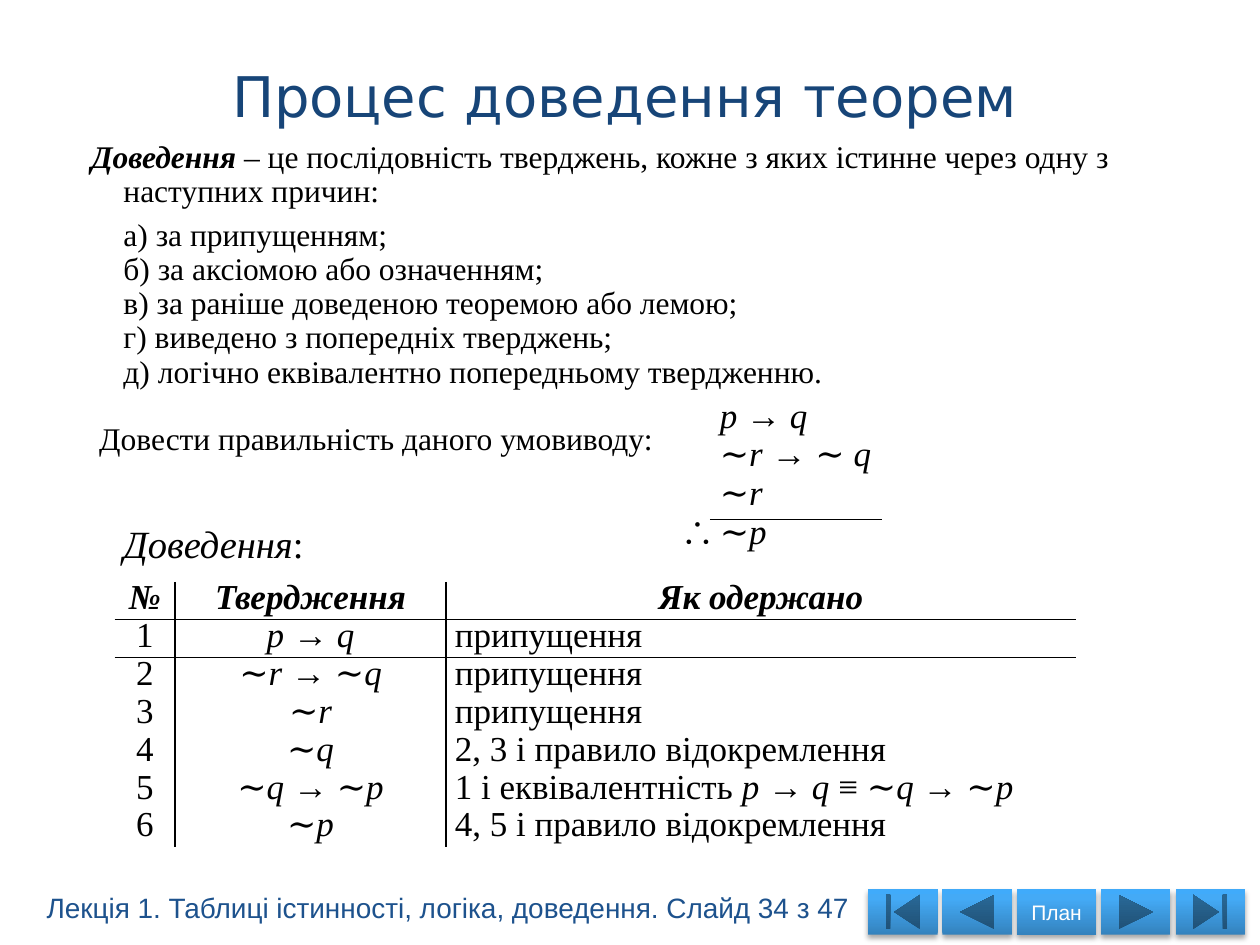
from pptx import Presentation
from pptx import util as u
from pptx.dml.color import RGBColor
from pptx.enum import shapes, text
from pptx.oxml import ns, parse_xml

BLACK = RGBColor(0x00, 0x00, 0x00)
WHITE = RGBColor(0xFF, 0xFF, 0xFF)
TITLE_BLUE = RGBColor(0x17, 0x45, 0x78)
FOOTER_BLUE = RGBColor(0x1D, 0x52, 0x8D)
BUTTON_STOPS = [
    (0, RGBColor(0x34, 0x83, 0xBE)),
    (80, RGBColor(0x44, 0xAA, 0xF6)),
    (100, RGBColor(0x40, 0xAB, 0xFB)),
]
SERIF = "Times New Roman"
NO_TABLE_STYLE = "{2D5ABB26-0587-4C30-8999-92F81FD0307C}"
CENTER, LEFT, RIGHT = text.PP_ALIGN.CENTER, text.PP_ALIGN.LEFT, text.PP_ALIGN.RIGHT
JUSTIFY = text.PP_ALIGN.JUSTIFY


def write(paragraph, markup, size, bold=False):
    """Add serif runs; parts between asterisks are italic, and bold if asked."""
    for i, part in enumerate(markup.split("*")):
        if part:
            run = paragraph.add_run()
            run.text = part
            run.font.name = SERIF
            run.font.size = u.Pt(size)
            run.font.color.rgb = BLACK
            run.font.italic = i % 2 == 1
            run.font.bold = bold and i % 2 == 1


def add_grid(left, top, widths, row_height, rows, aligns, spacing, margin, borders):
    """Add a plain table; borders maps (row, column) to the ruled sides, e.g. "RB"."""
    frame = slide.shapes.add_table(
        len(rows), len(widths), u.Cm(left), u.Cm(top),
        u.Cm(sum(widths)), u.Cm(row_height * len(rows)))
    grid = frame.table
    grid.first_row = grid.horz_banding = False
    grid._tbl.tblPr.find(ns.qn("a:tableStyleId")).text = NO_TABLE_STYLE
    for column, width in zip(grid.columns, widths):
        column.width = u.Cm(width)
    for r, row in enumerate(rows):
        grid.rows[r].height = u.Cm(row_height)
        for c, markup in enumerate(row):
            cell = grid.cell(r, c)
            cell.margin_left = cell.margin_right = u.Cm(margin)
            cell.margin_top = cell.margin_bottom = 0
            paragraph = cell.text_frame.paragraphs[0]
            is_header = markup in HEADERS
            paragraph.alignment = CENTER if is_header else aligns[c]
            paragraph.line_spacing = spacing
            write(paragraph, markup, 20, bold=is_header)
            for side in borders.get((r, c), ""):
                cell._tc.get_or_add_tcPr().append(parse_xml(
                    f'<a:ln{side} {ns.nsdecls("a")} w="12700"><a:solidFill>'
                    f'<a:srgbClr val="{BLACK}"/></a:solidFill></a:ln{side}>'))
            cell.fill.background()


prs = Presentation()
prs.slide_width, prs.slide_height = u.Cm(25.4), u.Cm(19.05)
slide = prs.slides.add_slide(prs.slide_layouts[6])

# Title
title = slide.shapes.add_textbox(u.Cm(1.7), u.Cm(0.91), u.Cm(21.8), u.Cm(2)).text_frame
title.word_wrap = True
title.vertical_anchor = text.MSO_ANCHOR.MIDDLE
heading = title.paragraphs[0]
heading.text = "Процес доведення теорем"
heading.alignment = CENTER
heading.runs[0].font.name = "DejaVu Sans"
heading.runs[0].font.size = u.Pt(32)
heading.runs[0].font.color.rgb = TITLE_BLUE

# Definition, reasons and task: markup, size, bold, left margin, first indent, space before
body = slide.shapes.add_textbox(u.Cm(1.27), u.Cm(2.72), u.Cm(22.86), u.Cm(12)).text_frame
body.word_wrap = True
BODY_LINES = [
    ("*Доведення *– це послідовність тверджень, кожне з яких істинне через одну "
     "з наступних причин:", 18, True, 0.97, -0.65, 0),
    ("а) за припущенням;", 18, False, 0.97, 0, 6),
    ("б) за аксіомою або означенням;", 18, False, 0.97, 0, 0),
    ("в) за раніше доведеною теоремою або лемою;", 18, False, 0.97, 0, 0),
    ("г) виведено з попередніх тверджень;", 18, False, 0.97, 0, 0),
    ("д) логічно еквівалентно попередньому твердженню.", 18, False, 0.97, 0, 0),
    ("Довести правильність даного умовиводу:", 18, False, 0.48, 0, 19),
    ("*Доведення*:", 22, False, 0.97, 0, 39),
]
for i, (markup, size, bold, margin, indent, before) in enumerate(BODY_LINES):
    paragraph = body.paragraphs[0] if i == 0 else body.add_paragraph()
    properties = paragraph._p.get_or_add_pPr()
    properties.set("marL", str(u.Cm(margin)))
    properties.set("indent", str(u.Cm(indent)))
    paragraph.line_spacing = 0.9
    paragraph.space_before = u.Pt(before)
    write(paragraph, markup, size, bold)

# Argument to prove, with the conclusion under a rule
HEADERS = ["*№*", "*Твердження*", "*Як одержано*"]
argument = [
    ["", "*p → q*"],
    ["", "∼*r → *∼* q*"],
    ["", "∼*r*"],
    ["∴", "∼*p*"],
]
add_grid(13.51, 8.13, [0.8, 3.48], 0.78, argument, [RIGHT, JUSTIFY], 0.8, 0.2,
         {(2, 1): "B", (3, 1): "T"})

# Proof
proof = [
    HEADERS,
    ["1", "*p → q*", "припущення"],
    ["2", "∼*r → *∼*q*", "припущення"],
    ["3", "∼*r*", "припущення"],
    ["4", "∼*q*", "2, 3 і правило відокремлення"],
    ["5", "∼*q *→ ∼*p*", "1 і еквівалентність *p → q *≡ ∼*q → *∼*p*"],
    ["6", "∼*p*", "4, 5 і правило відокремлення"],
]
column_sides = ["R", "LR", "L"]
proof_borders = {
    (r, c): sides + {0: "B", 1: "T"}.get(r, "")
    for r in range(len(proof)) for c, sides in enumerate(column_sides)
}
add_grid(2.31, 11.73, [1.22, 5.46, 12.7], 0.7, proof, [CENTER, CENTER, LEFT], 0.9, 0.18,
         proof_borders)

# Navigation buttons
kind = shapes.MSO_SHAPE
NAVIGATION = [
    (kind.ACTION_BUTTON_BEGINNING, 1.4, ""),
    (kind.ACTION_BUTTON_BACK_OR_PREVIOUS, 1.4, ""),
    (kind.ACTION_BUTTON_CUSTOM, 1.6, "План"),
    (kind.ACTION_BUTTON_FORWARD_OR_NEXT, 1.4, ""),
    (kind.ACTION_BUTTON_END, 1.4, ""),
]
stops = "".join(f'<a:gs pos="{position * 1000}"><a:srgbClr val="{color}"/></a:gs>'
                for position, color in BUTTON_STOPS)
navigation = slide.shapes.add_group_shape()
left = 17.5
for button_kind, width, label in NAVIGATION:
    button = navigation.shapes.add_shape(
        button_kind, u.Cm(left), u.Cm(17.93), u.Cm(width), u.Cm(0.91))
    left += width + 0.1
    button.line.fill.background()
    button.line._ln.addprevious(parse_xml(
        f'<a:gradFill {ns.nsdecls("a")} rotWithShape="1"><a:gsLst>{stops}</a:gsLst>'
        '<a:lin ang="16200000" scaled="0"/></a:gradFill>'))
    button.line._ln.addnext(parse_xml(
        f'<a:effectLst {ns.nsdecls("a")}><a:outerShdw blurRad="{u.Pt(3.1)}" '
        f'dist="{u.Pt(1.8)}" dir="5400000" rotWithShape="0"><a:srgbClr val="{BLACK}">'
        '<a:alpha val="35000"/></a:srgbClr></a:outerShdw></a:effectLst>'))
    if label:
        caption = button.text_frame
        caption.margin_left = caption.margin_right = 0
        caption.vertical_anchor = text.MSO_ANCHOR.MIDDLE
        caption.text = label
        caption.paragraphs[0].alignment = CENTER
        font = caption.paragraphs[0].runs[0].font
        font.name, font.size = "Arial", u.Pt(12)
        font.color.rgb = WHITE

# Footer
footer = slide.shapes.add_textbox(u.Cm(0.69), u.Cm(17.83), u.Cm(16.92), u.Cm(0.94)).text_frame
footer.word_wrap = False
footer.text = "Лекція 1. Таблиці істинності, логіка, доведення. Слайд 34 з 47"
font = footer.paragraphs[0].runs[0].font
font.name, font.size = "Arial", u.Pt(16)
font.color.rgb = FOOTER_BLUE

prs.save("out.pptx")
